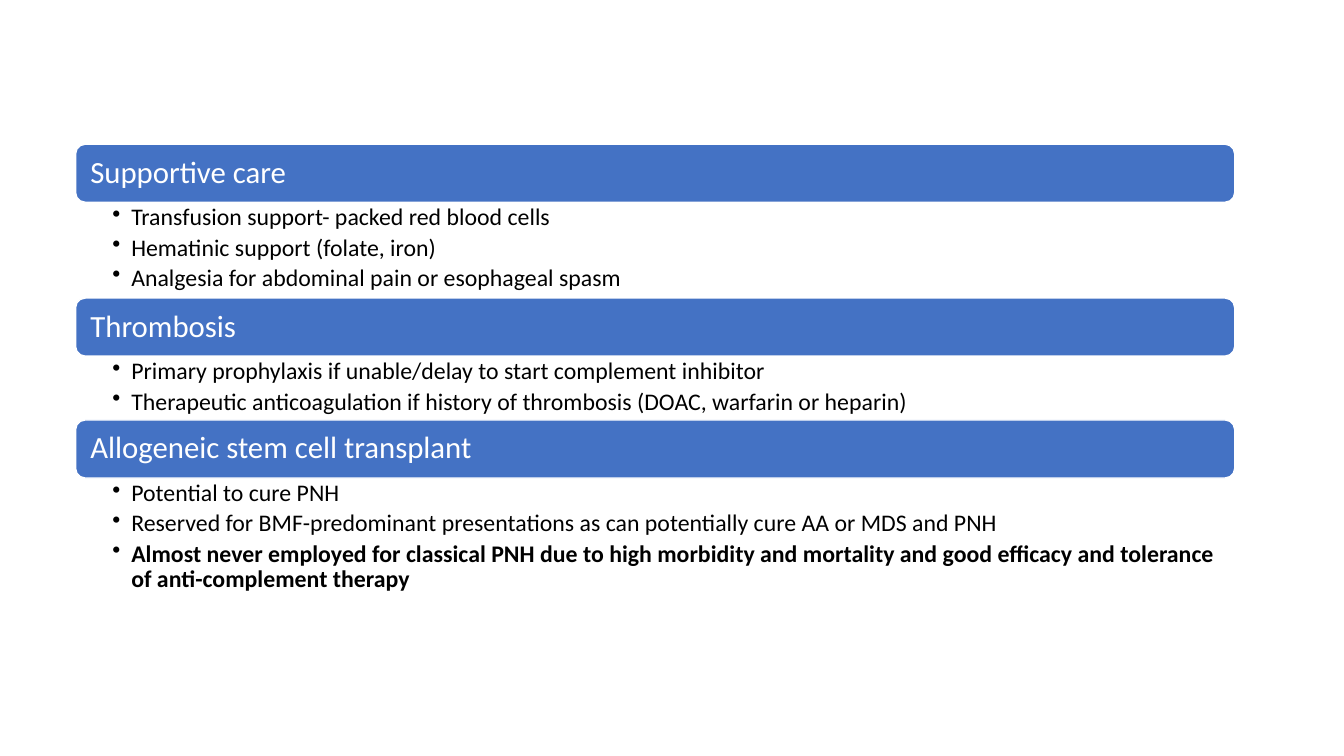
from lxml import etree
from pptx import Presentation
from pptx.dml.color import RGBColor
from pptx.enum.shapes import MSO_SHAPE
from pptx.enum.text import MSO_ANCHOR, PP_ALIGN
from pptx.oxml.ns import qn
from pptx.util import Pt

ROUNDED = MSO_SHAPE.ROUNDED_RECTANGLE
MIDDLE, TOP = MSO_ANCHOR.MIDDLE, MSO_ANCHOR.TOP
LEFT = PP_ALIGN.LEFT

# Each section: heading, height of its bullet area in points, bullets (text, bold)
SECTIONS = [
    ("Supportive care", 68.4, [
        ("Transfusion support- packed red blood cells", False),
        ("Hematinic support (folate, iron)", False),
        ("Analgesia for abdominal pain or esophageal spasm", False),
    ]),
    ("Thrombosis", 45.6, [
        ("Primary prophylaxis if unable/delay to start complement inhibitor", False),
        ("Therapeutic anticoagulation if history of thrombosis "
         "(DOAC, warfarin or heparin)", False),
    ]),
    ("Allogeneic stem cell transplant", 87.8, [
        ("Potential to cure PNH", False),
        ("Reserved for BMF-predominant presentations as can potentially cure "
         "AA or MDS and PNH", False),
        ("Almost never employed for classical PNH due to high morbidity and "
         "mortality and good efficacy and tolerance of anti-complement therapy", True),
    ]),
]

THEME = {
    "font": "Calibri",
    "bar": RGBColor(0x44, 0x72, 0xC4),
    "white": RGBColor(0xFF, 0xFF, 0xFF),
    "black": RGBColor(0, 0, 0),
    "heading": 22,
    "bullet": 17,
}

SLIDE_W, SLIDE_H = 960, 540
LIST_X, LIST_Y, LIST_W = 54, 103, 828
BAR_H = 41.5
HANG = 13.5


def set_frame(tf, anchor, left, right, edge):
    frame = {
        "word_wrap": True,
        "vertical_anchor": anchor,
        "margin_left": Pt(left),
        "margin_right": Pt(right),
        "margin_top": Pt(edge),
        "margin_bottom": Pt(edge),
    }
    for name, value in frame.items():
        setattr(tf, name, value)


def write(p, text, size, color, after, bold=False):
    p.alignment = LEFT
    p.line_spacing = 0.9
    p.space_after = Pt(after)
    r = p.add_run()
    r.text = text
    r.font.color.rgb = color
    style = {"name": THEME["font"], "size": Pt(size), "bold": bold}
    for name, value in style.items():
        setattr(r.font, name, value)


def add_bullet(p):
    pPr = p._p.get_or_add_pPr()
    pPr.set("marL", str(Pt(HANG)))
    pPr.set("indent", str(-Pt(HANG)))
    etree.SubElement(pPr, qn("a:buChar")).set("char", "•")


def add_bar(s, y, heading):
    sp = s.shapes.add_shape(ROUNDED, Pt(LIST_X), Pt(y), Pt(LIST_W), Pt(BAR_H))
    sp.shadow.inherit = False
    sp.fill.solid()
    sp.fill.fore_color.rgb = THEME["bar"]
    sp.line.color.rgb = THEME["white"]
    sp.line.width = Pt(1)
    set_frame(sp.text_frame, MIDDLE, 8.6, 8.6, 6)
    write(sp.text_frame.paragraphs[0], heading, THEME["heading"], THEME["white"], 0)


def add_bullets(s, y, height, bullets):
    tf = s.shapes.add_textbox(Pt(LIST_X), Pt(y), Pt(LIST_W), Pt(height)).text_frame
    set_frame(tf, TOP, 26.3, 12.2, 2.2)
    for i, (text, bold) in enumerate(bullets):
        p = tf.add_paragraph() if i else tf.paragraphs[0]
        p.level = 1
        write(p, text, THEME["bullet"], THEME["black"], 3.2, bold)
        add_bullet(p)


def main():
    prs = Presentation()
    prs.slide_width, prs.slide_height = Pt(SLIDE_W), Pt(SLIDE_H)
    s = prs.slides.add_slide(prs.slide_layouts[6])
    y = LIST_Y
    for heading, height, bullets in SECTIONS:
        add_bar(s, y, heading)
        add_bullets(s, y + BAR_H, height, bullets)
        y += BAR_H + height
    prs.save("out.pptx")


if __name__ == "__main__":
    main()
